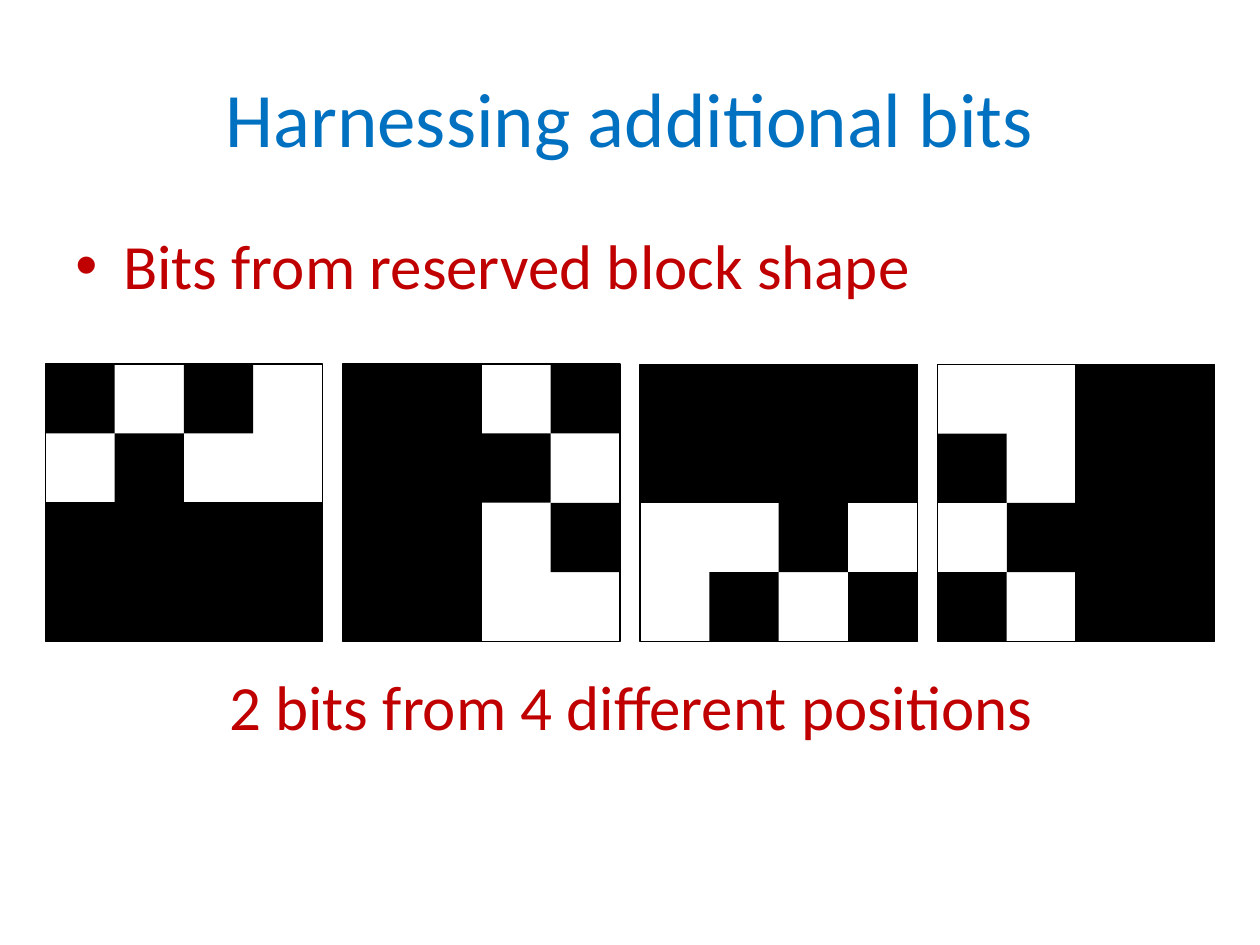
from lxml import etree
from pptx import Presentation
from pptx.dml.color import RGBColor
from pptx.enum.shapes import MSO_SHAPE
from pptx.enum.text import MSO_ANCHOR, PP_ALIGN
from pptx.oxml.ns import qn
from pptx.util import Pt

PX = 9144  # 100 px to the inch
BLUE = RGBColor(0x00, 0x70, 0xC0)
RED = RGBColor(0xC0, 0x00, 0x00)
BLACK = RGBColor(0, 0, 0)
RECTANGLE = MSO_SHAPE.RECTANGLE
TOP, MIDDLE = MSO_ANCHOR.TOP, MSO_ANCHOR.MIDDLE
LEFT, CENTER = PP_ALIGN.LEFT, PP_ALIGN.CENTER


def write(shape, text, size=36, color=RED, align=CENTER, anchor=TOP, bullet=None):
    frame = shape.text_frame
    frame.word_wrap = True
    frame.vertical_anchor = anchor
    paragraph = frame.paragraphs[0]
    paragraph.alignment = align
    run = paragraph.add_run()
    run.text = text
    run.font.name = "Calibri"
    run.font.size = Pt(size)
    run.font.color.rgb = color
    if bullet:
        properties = paragraph._p.get_or_add_pPr()
        properties.set("marL", str(38 * PX))
        properties.set("indent", str(-38 * PX))
        etree.SubElement(properties, qn("a:buFont")).set("typeface", "Arial")
        etree.SubElement(properties, qn("a:buChar")).set("char", bullet)


def add_rectangle(group, x, y, width, height, filled=True, outlined=True):
    rectangle = group.shapes.add_shape(
        RECTANGLE, x * PX, y * PX, width * PX, height * PX)
    rectangle.shadow.inherit = False
    if filled:
        rectangle.fill.solid()
        rectangle.fill.fore_color.rgb = BLACK
    else:
        rectangle.fill.background()
    if outlined:
        rectangle.line.color.rgb = BLACK
        rectangle.line.width = Pt(0.75)
    else:
        rectangle.line.fill.background()


prs = Presentation()
prs.slide_width, prs.slide_height = 1000 * PX, 750 * PX
slide = prs.slides.add_slide(prs.slide_layouts[5])

# Title
title = slide.shapes.title
title.left, title.top, title.width, title.height = 50 * PX, 30 * PX, 900 * PX, 125 * PX
write(title, "Harnessing additional bits", size=44, color=BLUE, anchor=MIDDLE)

# Bullet above the blocks
topic = slide.shapes.add_textbox(50 * PX, 175 * PX, 900 * PX, 82 * PX)
write(topic, "Bits from reserved block shape", align=LEFT, bullet="•")

# One block of 4 x 4 cells, turned a quarter further at each position
CELL = 55
BLOCK = 4 * CELL
BLOCK_LEFT, BLOCK_TOP, BLOCK_PITCH = 36, 289, 236
BLACK_CELLS = [(2, 0), (1, 1), (0, 0)]  # column, row
for position in range(4):
    x = BLOCK_LEFT + position * BLOCK_PITCH
    block = slide.shapes.add_group_shape()
    add_rectangle(block, x, BLOCK_TOP, BLOCK, 213, filled=False)
    add_rectangle(block, x, BLOCK_TOP + 2 * CELL, BLOCK, 2 * CELL)
    for column, row in BLACK_CELLS:
        add_rectangle(block, x + column * CELL, BLOCK_TOP + row * CELL,
                      CELL, CELL, outlined=False)
    block.rotation = 90 * position

# Caption below the blocks
caption = slide.shapes.add_textbox(51 * PX, 525 * PX, 900 * PX, 82 * PX)
write(caption, "2 bits from 4 different positions")

prs.save("out.pptx")
